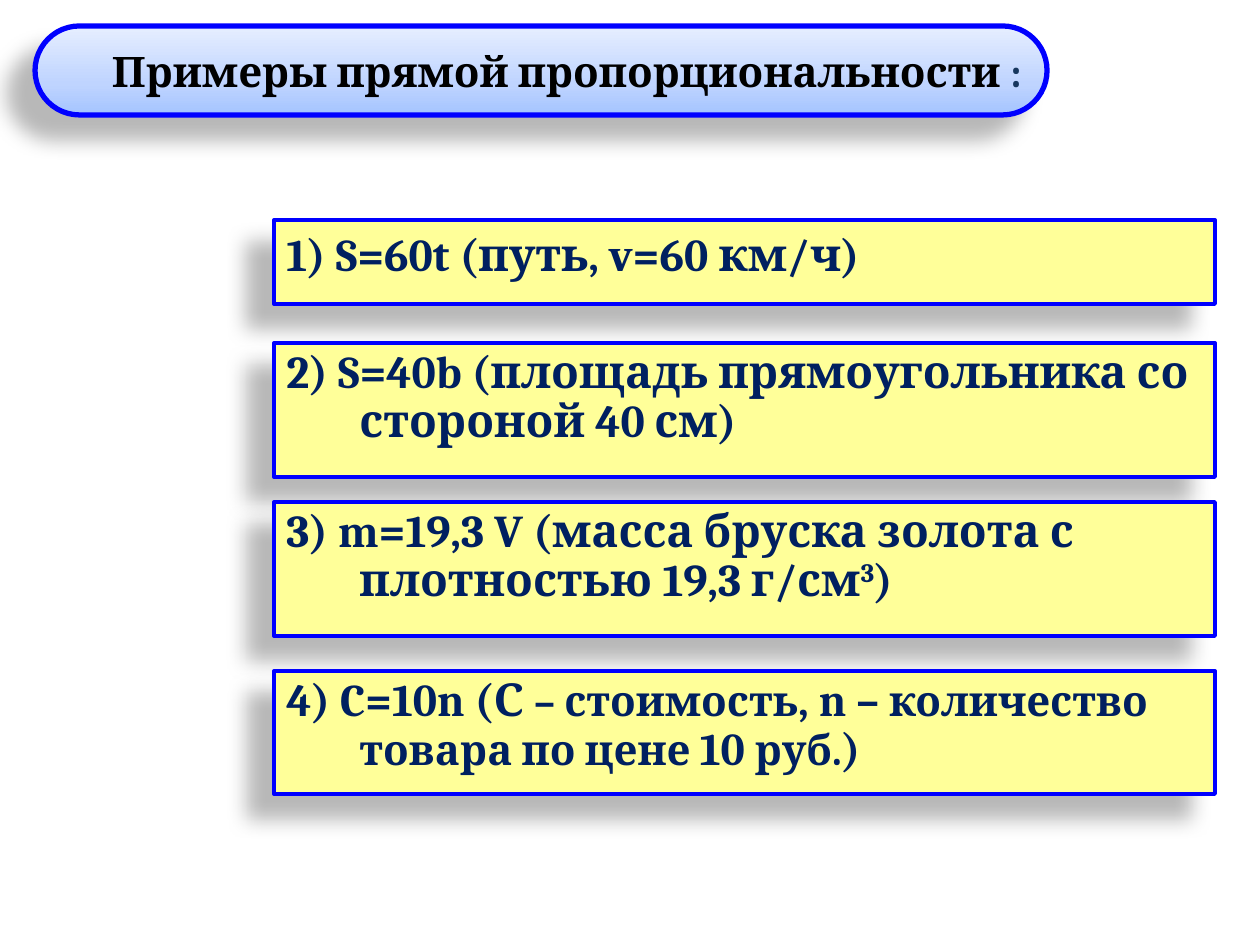
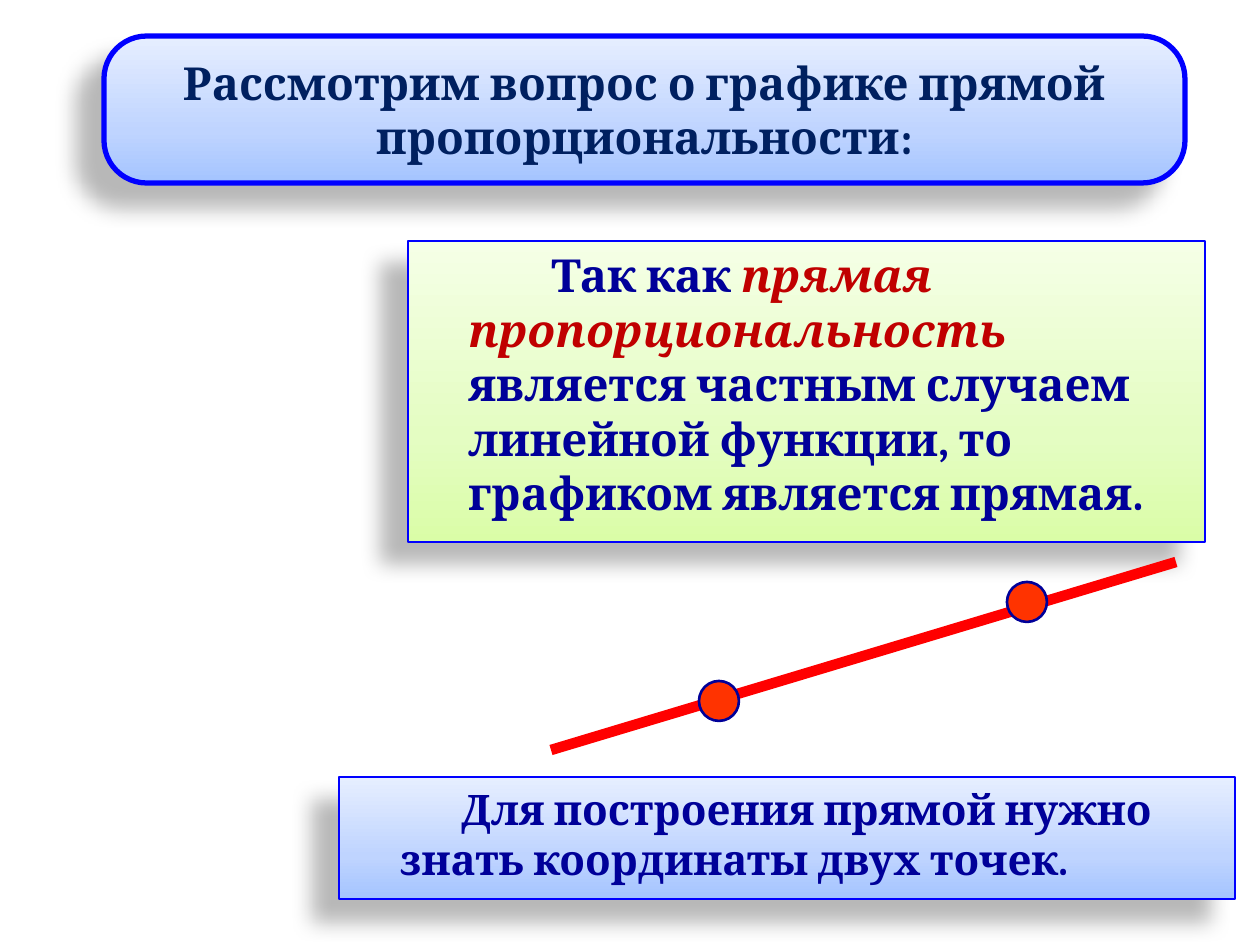
from dataclasses import dataclass

from lxml.etree import SubElement
from pptx import Presentation
from pptx.dml.color import RGBColor
from pptx.enum.shapes import MSO_CONNECTOR, MSO_SHAPE
from pptx.enum.text import MSO_ANCHOR, PP_ALIGN
from pptx.oxml.ns import qn
from pptx.util import Pt

EMU_PER_PX = 914400 / 126


@dataclass(frozen=True)
class Theme:
    font: str = "Cambria"
    large: int = 26
    medium: int = 24
    black: str = "000000"
    navy: str = "002060"
    slate: str = "17375E"
    indigo: str = "000099"
    crimson: str = "C00000"
    border: str = "0000FF"
    yellow: str = "FFFF99"
    graph: str = "FF0000"
    point: str = "FF3300"
    # Gradient stops, bottom to top
    blue: tuple = ((0, "A4C4FF"), (35, "BFD4FF"), (100, "E6EEFF"))
    green: tuple = ((0, "DAFDA7"), (35, "E4FDC2"), (100, "F5FFE6"))


T = Theme()


def px(n):
    return round(n * EMU_PER_PX)


def rgb(code):
    return RGBColor.from_string(code)


# --- Fills and effects ---
def set_fill(s, fill):
    if isinstance(fill, str):
        s.fill.solid()
        s.fill.fore_color.rgb = rgb(fill)
        return
    s.fill.gradient()
    s.fill.gradient_angle = 90
    stops = s._element.spPr.find(".//" + qn("a:gsLst"))
    for stop in list(stops):
        stops.remove(stop)
    for percent, code in fill:
        stop = SubElement(stops, qn("a:gs"), pos=str(percent * 1000))
        SubElement(stop, qn("a:srgbClr"), val=code)


def add_shadow(s):
    effects = s._element.spPr.find(qn("a:effectLst"))
    shadow = SubElement(effects, qn("a:outerShdw"), blurRad="149860", dist="250190",
                        dir=str(141 * 60000), algn="ctr", rotWithShape="0")
    color = SubElement(shadow, qn("a:srgbClr"), val="000000")
    SubElement(color, qn("a:alpha"), val="28000")


# --- Elements ---
def add_block(slide, kind, box, fill, line, width):
    s = slide.shapes.add_shape(kind, *map(px, box))
    s.shadow.inherit = False
    set_fill(s, fill)
    s.line.color.rgb = rgb(line)
    s.line.width = Pt(width)
    return s


def add_run(p, text, size, color, italic=False, raised=False):
    r = p.add_run()
    r.text = text
    r.font.name = T.font
    r.font.size = Pt(size)
    r.font.bold = True
    r.font.italic = italic
    r.font.color.rgb = rgb(color)
    if raised:
        r._r.get_or_add_rPr().set("baseline", "30000")


def write(s, runs, align=PP_ALIGN.LEFT, anchor=MSO_ANCHOR.TOP,
          margin=0, indent=0, spacing=1.0):
    tf = s.text_frame
    tf.word_wrap = True
    tf.vertical_anchor = anchor
    p = tf.paragraphs[0]
    p.alignment = align
    p.line_spacing = spacing
    pPr = p._p.get_or_add_pPr()
    pPr.set("marL", str(px(margin)))
    pPr.set("indent", str(px(indent)))
    for run in runs:
        add_run(p, *run)


def add_title(slide, box, radius, runs, align):
    s = add_block(slide, MSO_SHAPE.ROUNDED_RECTANGLE, box, T.blue, T.border, 3)
    s.adjustments[0] = radius
    add_shadow(s)
    write(s, runs, align, MSO_ANCHOR.MIDDLE)


def add_panel(slide, box, fill, width, runs, **layout):
    s = add_block(slide, MSO_SHAPE.RECTANGLE, box, fill, T.border, width)
    add_shadow(s)
    write(s, runs, **layout)


def add_graph(slide, start, end, points):
    c = slide.shapes.add_connector(MSO_CONNECTOR.STRAIGHT, *map(px, start + end))
    c.line.color.rgb = rgb(T.graph)
    c.line.width = Pt(6)
    SubElement(c._element.spPr, qn("a:effectLst"))
    size = 40
    for x, y in points:
        box = (x - size // 2, y - size // 2, size, size)
        add_block(slide, MSO_SHAPE.OVAL, box, T.point, T.indigo, 1.5)


# --- Slides ---
def build_examples(slide):
    big = (T.large, T.navy)
    mid = (T.medium, T.navy)
    examples = [
        (220, 84, 1.0, [("1) S=60t (путь, v=60 км/ч)", *big)]),
        (343, 134, 0.9, [("2) S=40b (площадь прямоугольника со стороной 40 см)", *big)]),
        (502, 134, 0.9, [("3) m=19,3 V (масса бруска золота с плотностью 19,3 г/см", *big),
                         ("3", *big, False, True), (")", *big)]),
        (671, 123, 0.9, [("4) C=10n (С ", *big), ("– стоимость", *mid), (", n – ", *big),
                         ("количество товара по цене ", *mid), ("10 ", *big),
                         ("руб.", *mid), (")", *big)]),
    ]
    for top, height, spacing, runs in examples:
        add_panel(slide, (274, top, 941, height), T.yellow, 2.25, runs,
                  margin=73, indent=-73, spacing=spacing)
    add_title(slide, (35, 26, 1012, 89), 0.5,
              [("Примеры прямой пропорциональности ", T.medium, T.black),
               (":", T.medium, T.slate)], PP_ALIGN.RIGHT)


def build_graph(slide):
    add_panel(slide, (408, 241, 797, 301), T.green, 0.75,
              [("Так как ", T.large, T.indigo),
               ("прямая пропорциональность ", T.large, T.crimson, True),
               ("является частным случаем линейной функции, то графиком является прямая.",
                T.large, T.indigo)], margin=48, indent=83)
    add_title(slide, (104, 36, 1081, 147), 0.29,
              [("Рассмотрим вопрос о графике прямой пропорциональности:", T.large, T.navy)],
              PP_ALIGN.CENTER)
    add_graph(slide, (551, 750), (1176, 562), [(1027, 602), (719, 701)])
    add_panel(slide, (339, 777, 896, 122), T.blue, 0.75,
              [("Для построения прямой нужно знать координаты двух точек.",
                T.medium, T.indigo)], margin=48, indent=62)


def main():
    prs = Presentation()
    prs.slide_width, prs.slide_height = px(1260), px(945)
    for build in (build_examples, build_graph):
        build(prs.slides.add_slide(prs.slide_layouts[6]))
    prs.save("out.pptx")


if __name__ == "__main__":
    main()
